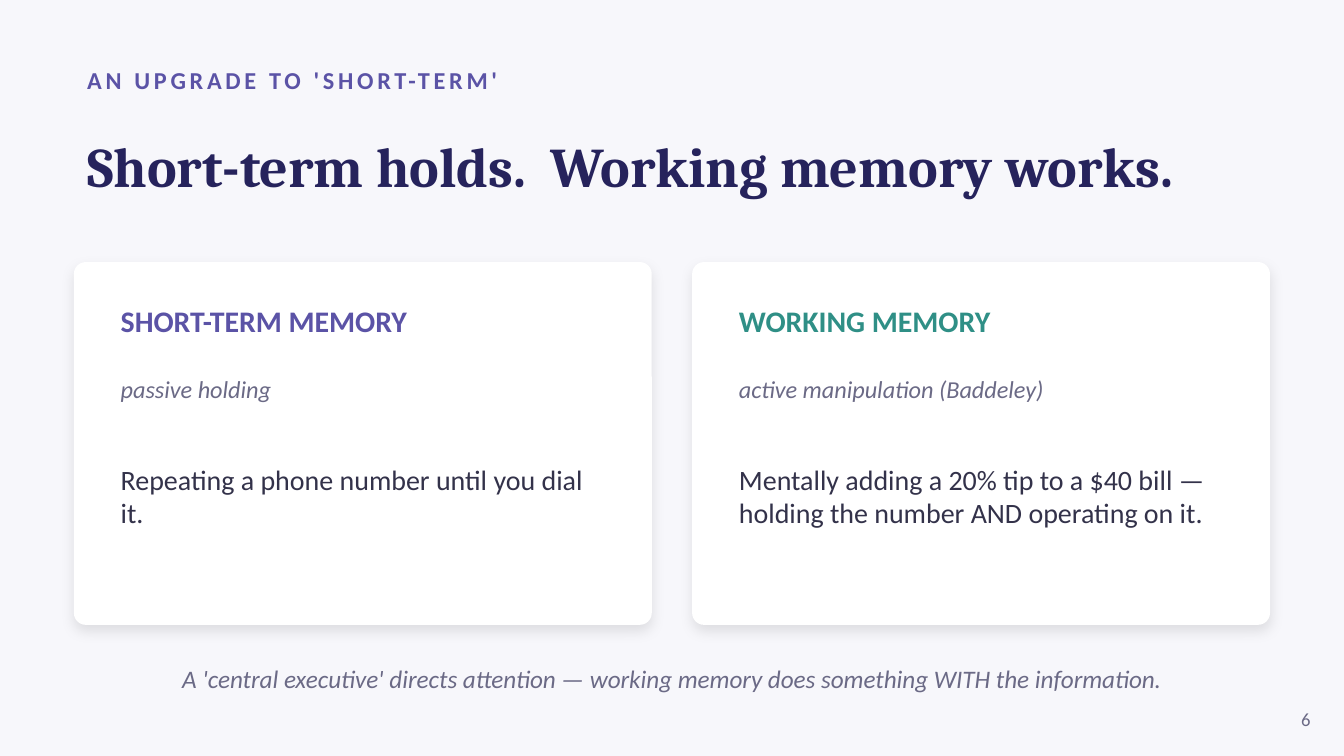
from lxml.etree import SubElement
from pptx import Presentation
from pptx.dml.color import RGBColor
from pptx.enum.shapes import MSO_SHAPE
from pptx.enum.text import MSO_ANCHOR, PP_ALIGN
from pptx.oxml.ns import qn
from pptx.util import Emu, Pt

PX = 4572
BACKGROUND = RGBColor(0xF7, 0xF7, 0xFB)
WHITE = RGBColor(0xFF, 0xFF, 0xFF)
PURPLE = RGBColor(0x5B, 0x53, 0xA6)
NAVY = RGBColor(0x26, 0x23, 0x5C)
TEAL = RGBColor(0x2F, 0x8F, 0x86)
MUTED = RGBColor(0x6B, 0x6A, 0x86)
INK = RGBColor(0x33, 0x32, 0x4A)


def px(n):
    return Emu(n * PX)


def add_box(s, box, anchor=MSO_ANCHOR.MIDDLE):
    tf = s.shapes.add_textbox(*map(px, box)).text_frame
    tf.word_wrap = True
    tf.vertical_anchor = anchor
    return tf


def style(p, text, size, color, bold=False, italic=False,
          font="Calibri", align=PP_ALIGN.LEFT, after=0):
    p.add_run().text = text
    p.alignment = align
    p.space_after = Pt(after)
    p.font.name = font
    p.font.size = Pt(size)
    p.font.bold = bold
    p.font.italic = italic
    p.font.color.rgb = color


def add_shadow(sp):
    sp.shadow.inherit = False
    effects = sp._element.spPr.find(qn("a:effectLst"))
    shadow = SubElement(effects, qn("a:outerShdw"), blurRad=str(Pt(7)),
                        dist=str(Pt(3)), dir="5400000", algn="bl",
                        rotWithShape="0")
    color = SubElement(shadow, qn("a:srgbClr"), val="000000")
    SubElement(color, qn("a:alpha"), val="10000")


def add_header(s, x, y, w, kicker, title):
    p = add_box(s, (x, y, w, 70)).paragraphs[0]
    style(p, kicker, 13, PURPLE, bold=True)
    p._p.get_or_add_pPr().get_or_add_defRPr().set("spc", "200")
    p = add_box(s, (x, y + 72, w, 180)).paragraphs[0]
    style(p, title, 30, NAVY, bold=True, font="Cambria")


def add_card(s, x, y, w, h, heading, color, summary, example):
    sp = s.shapes.add_shape(MSO_SHAPE.ROUNDED_RECTANGLE,
                            px(x), px(y), px(w), px(h))
    sp.adjustments[0] = 0.033
    sp.fill.solid()
    sp.fill.fore_color.rgb = WHITE
    sp.line.fill.background()
    add_shadow(sp)
    tf = add_box(s, (x + 50, y + 50, w - 100, h - 60), MSO_ANCHOR.TOP)
    style(tf.paragraphs[0], heading, 16, color, bold=True, after=19.5)
    style(tf.add_paragraph(), summary, 13, MUTED, italic=True, after=31.5)
    style(tf.add_paragraph(), example, 15, INK)


def add_footer(s, x, y, w, takeaway, number):
    p = add_box(s, (x, y, w, 80)).paragraphs[0]
    style(p, takeaway, 13.5, MUTED, italic=True, align=PP_ALIGN.CENTER)
    p = add_box(s, (x + w - 20, y + 70, 100, 60)).paragraphs[0]
    style(p, number, 10, MUTED, align=PP_ALIGN.RIGHT)


def main():
    prs = Presentation()
    prs.slide_width, prs.slide_height = px(2000), px(1125)
    s = prs.slides.add_slide(prs.slide_layouts[6])
    s.background.fill.solid()
    s.background.fill.fore_color.rgb = BACKGROUND

    left, width, gap = 110, 1780, 60
    add_header(s, left, 84, width, "AN UPGRADE TO 'SHORT-TERM'",
               "Short-term holds.  Working memory works.")
    cards = [
        ("SHORT-TERM MEMORY", PURPLE, "passive holding",
         "Repeating a phone number until you dial it."),
        ("WORKING MEMORY", TEAL, "active manipulation (Baddeley)",
         "Mentally adding a 20% tip to a $40 bill — "
         "holding the number AND operating on it."),
    ]
    card_w = (width - gap) // len(cards)
    for i, card in enumerate(cards):
        add_card(s, left + i * (card_w + gap), 390, card_w, 540, *card)
    add_footer(s, left, 970, width,
               "A 'central executive' directs attention — "
               "working memory does something WITH the information.", "6")
    prs.save("out.pptx")


if __name__ == "__main__":
    main()
